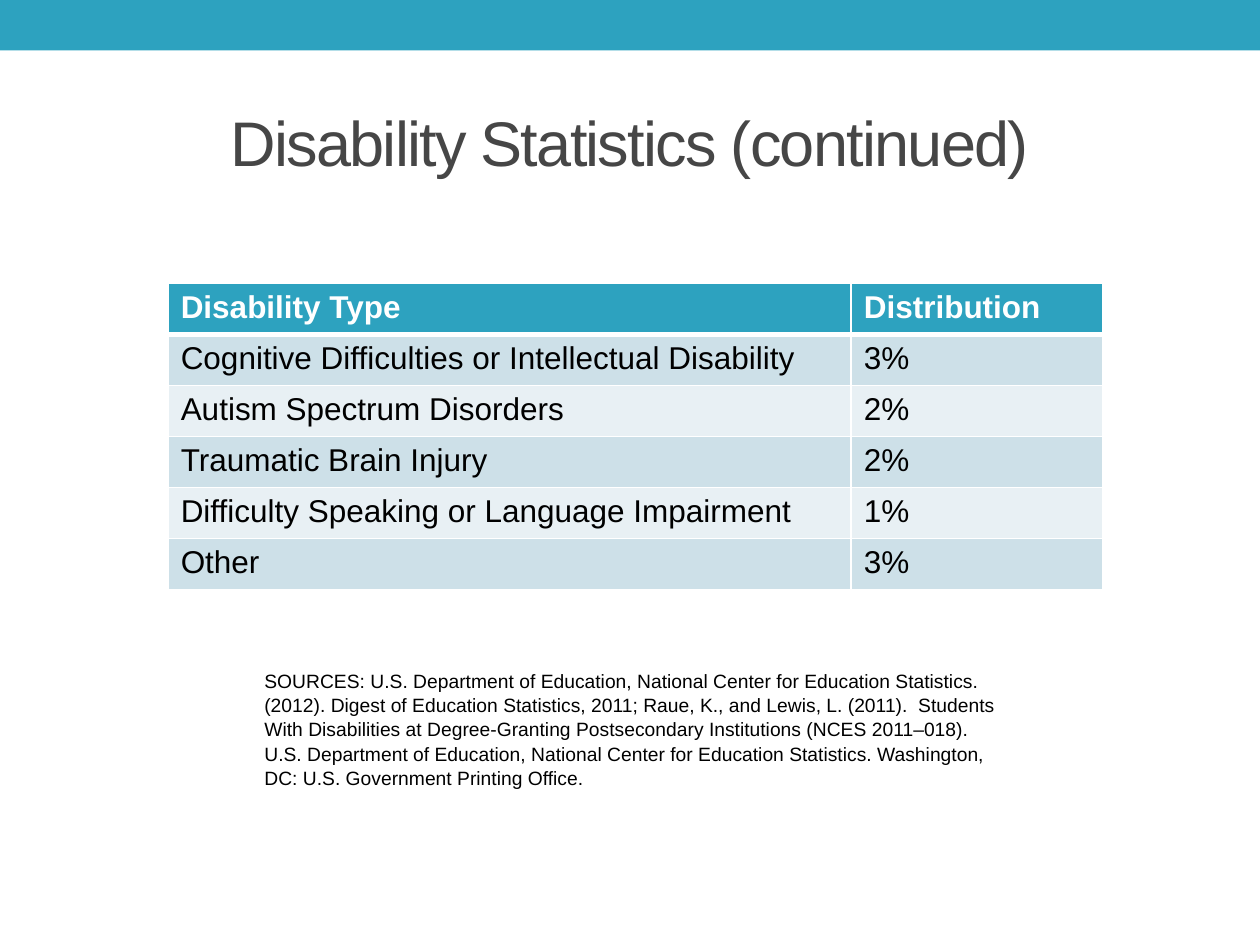
from typing import NamedTuple

from lxml import etree
from pptx import Presentation
from pptx import util as u
from pptx.dml.color import RGBColor
from pptx.enum import shapes, text
from pptx.oxml.ns import qn

COLORS = {
    "accent": "2DA2BF",
    "title": "464646",
    "body": "000000",
    "white": "FFFFFF",
    "band_dark": "CDE0E8",
    "band_light": "E8F0F4",
}
FONT = "Arial"
COLUMN_WIDTHS = (13.77, 5.08)
HEADER_HEIGHT, ROW_HEIGHT = 0.98, 1.03
SOURCES = (
    "SOURCES: U.S. Department of Education, National Center for Education Statistics. "
    "(2012). Digest of Education Statistics, 2011; Raue, K., and Lewis, L. (2011).  "
    "Students With Disabilities at Degree-Granting Postsecondary Institutions "
    "(NCES 2011–018).  U.S. Department of Education, National Center for Education "
    "Statistics. Washington, DC: U.S. Government Printing Office."
)


class Row(NamedTuple):
    disability: str
    share: str


HEADER = Row("Disability Type", "Distribution")
ROWS = [
    Row("Cognitive Difficulties or Intellectual Disability", "3%"),
    Row("Autism Spectrum Disorders", "2%"),
    Row("Traumatic Brain Injury", "2%"),
    Row("Difficulty Speaking or Language Impairment", "1%"),
    Row("Other", "3%"),
]


class Area(NamedTuple):
    """Left, top, width and height in centimetres."""
    left: float
    top: float
    width: float
    height: float

    def lengths(self) -> list:
        return [u.Cm(value) for value in self]


def color(name: str) -> RGBColor:
    return RGBColor.from_string(COLORS[name])


def set_font(para, size: float, color_name: str, bold: bool = False) -> None:
    para.font.name = FONT
    para.font.size = u.Pt(size)
    para.font.bold = bold
    para.font.color.rgb = color(color_name)


def add_text(page, area: Area, words: str, size: float, color_name: str):
    box = page.shapes.add_textbox(*area.lengths())
    box.text_frame.word_wrap = True
    para = box.text_frame.paragraphs[0]
    para.text = words
    set_font(para, size, color_name)
    return box


def add_bar(page, area: Area) -> None:
    bar = page.shapes.add_shape(shapes.MSO_SHAPE.RECTANGLE, *area.lengths())
    bar.shadow.inherit = False
    bar.fill.solid()
    bar.fill.fore_color.rgb = color("accent")
    bar.line.fill.background()


def add_title(page, area: Area, words: str) -> None:
    box = add_text(page, area, words, 36, "title")
    box.text_frame.vertical_anchor = text.MSO_ANCHOR.MIDDLE
    para = box.text_frame.paragraphs[0]
    para.alignment = text.PP_ALIGN.CENTER
    para.runs[0].font._element.set("spc", "-100")


def set_borders(cell, widths: dict) -> None:
    """Draw white borders; widths maps side (L, R, T, B) to points."""
    properties = cell._tc.get_or_add_tcPr()
    for side, width in widths.items():
        line = etree.SubElement(properties, qn(f"a:ln{side}"), w=str(u.Pt(width)))
        fill = etree.SubElement(line, qn("a:solidFill"))
        etree.SubElement(fill, qn("a:srgbClr"), val=COLORS["white"])


def add_statistics(page, left: float, top: float) -> None:
    height = HEADER_HEIGHT + ROW_HEIGHT * len(ROWS)
    area = Area(left, top, sum(COLUMN_WIDTHS), height)
    frame = page.shapes.add_table(len(ROWS) + 1, len(COLUMN_WIDTHS), *area.lengths())
    table = frame.table
    for column, width in zip(table.columns, COLUMN_WIDTHS):
        column.width = u.Cm(width)
    for index, row in enumerate([HEADER, *ROWS]):
        is_header = index == 0
        table.rows[index].height = u.Cm(HEADER_HEIGHT if is_header else ROW_HEIGHT)
        band = "band_dark" if index % 2 else "band_light"
        widths = {"L": 1, "R": 1, "T": 3 if index == 1 else 1, "B": 3 if is_header else 1}
        for cell, words in zip(table.rows[index].cells, row):
            set_borders(cell, widths)
            cell.fill.solid()
            cell.fill.fore_color.rgb = color("accent" if is_header else band)
            para = cell.text_frame.paragraphs[0]
            para.text = words
            set_font(para, 18, "white" if is_header else "body", is_header)


def main() -> None:
    deck = Presentation()
    deck.slide_width, deck.slide_height = u.Cm(25.4), u.Cm(19.05)
    page = deck.slides.add_slide(deck.slide_layouts[6])
    add_bar(page, Area(0, 0, 25.4, 1.02))
    add_title(page, Area(1.27, 1.47, 22.86, 2.74), "Disability Statistics (continued)")
    add_statistics(page, 3.39, 5.72)
    sources = add_text(page, Area(5.08, 13.34, 15.67, 2.62), SOURCES, 11, "body")
    sources.text_frame.paragraphs[0].line_spacing = 1.05
    deck.save("out.pptx")


if __name__ == "__main__":
    main()
